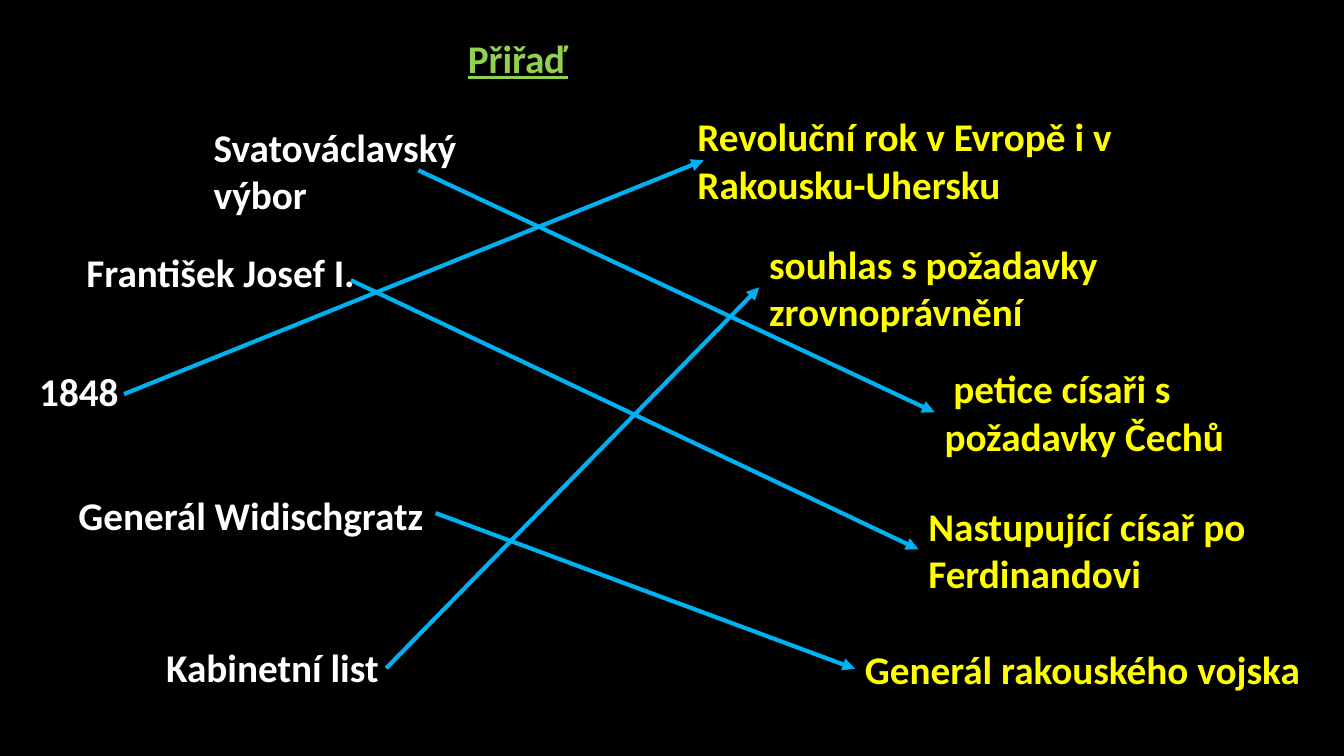
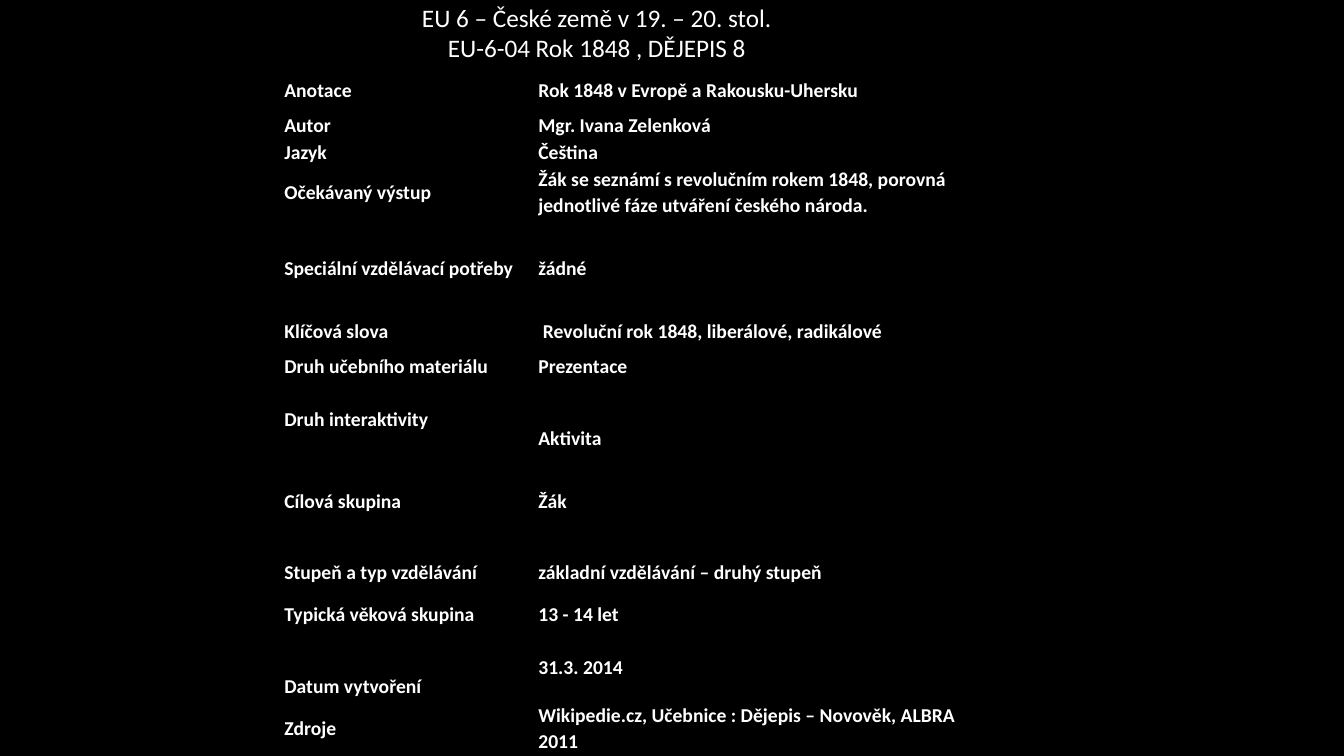
from dataclasses import dataclass

import pptx
import pptx.dml.color
import pptx.enum.shapes
import pptx.enum.text
import pptx.oxml
import pptx.oxml.ns
import pptx.util

Pt = pptx.util.Pt
Anchor = pptx.enum.text.MSO_ANCHOR
Align = pptx.enum.text.PP_ALIGN

# Shared look
FONT = "Calibri"
BLACK, WHITE, YELLOW, GREEN, BLUE = "000000", "FFFFFF", "FFFF00", "92D050", "00B0F0"
WIDTH, HEIGHT = pptx.util.Inches(13.33), pptx.util.Inches(7.5)
ONE_LINE, TWO_LINES = 7.6, 13.87


@dataclass
class Box:
    """A place on the slide, in percent of its width and height."""
    x: float
    y: float
    w: float
    h: float = ONE_LINE


@dataclass
class Pair:
    term: str
    term_box: Box
    answer: str
    answer_box: Box
    start: tuple[float, float]
    inset: float = 0


@dataclass
class Row:
    label: str
    value: str
    h: float
    label_anchor: Anchor = Anchor.MIDDLE
    value_anchor: Anchor = Anchor.MIDDLE


PAIRS = [
    Pair("Svatováclavský výbor", Box(15.15, 15.6, 24.23, TWO_LINES),
         " petice císaři s požadavky Čechů", Box(69.54, 47.6, 27.76, TWO_LINES), (31.13, 22.53)),
    Pair("František Josef I.", Box(5.7, 32.13, 27.16),
         "Nastupující císař po Ferdinandovi", Box(68.34, 65.73, 27.76, TWO_LINES), (26.11, 37.07)),
    Pair("1848", Box(2.18, 47.87, 23.63),
         "Revoluční rok v Evropě i v Rakousku-Uhersku", Box(51.16, 14.27, 32.86, TWO_LINES),
         (9.23, 52.13), inset=1.2),
    Pair("Generál Widischgratz", Box(5.1, 64.4, 30.46),
         "Generál rakouského vojska", Box(63.62, 84.67, 34.88), (32.41, 67.87)),
    Pair("Kabinetní list", Box(11.63, 84.4, 25.96),
         "souhlas s požadavky zrovnoprávnění", Box(56.49, 31.07, 32.48, TWO_LINES), (28.73, 88.4)),
]

# Row heights, in percent of the slide's height
TIGHT, NORMAL, DOUBLE, TALL, HIGH = 3.6, 5.6, 7.07, 8.53, 13.07
ROWS = [
    Row("Anotace", "Rok 1848 v Evropě a Rakousku-Uhersku", NORMAL),
    Row("Autor", "Mgr. Ivana Zelenková", TIGHT),
    Row("Jazyk", "Čeština", TIGHT),
    Row("Očekávaný výstup", "Žák se seznámí s revolučním rokem 1848, porovná "
        "jednotlivé fáze utváření českého národa.", DOUBLE),
    Row("Speciální vzdělávací potřeby", "žádné", HIGH),
    Row("Klíčová slova", " Revoluční rok 1848, liberálové, radikálové", TIGHT),
    Row("Druh učebního materiálu", "Prezentace", NORMAL),
    Row("Druh interaktivity", "Aktivita", TALL, value_anchor=Anchor.BOTTOM),
    Row("Cílová skupina", "Žák", HIGH),
    Row("Stupeň a typ vzdělávání", "základní vzdělávání – druhý stupeň", NORMAL),
    Row("Typická věková skupina", "13 - 14 let", NORMAL),
    Row("Datum vytvoření", "31.3. 2014", TALL, label_anchor=Anchor.BOTTOM),
    Row("Zdroje", "Wikipedie.cz, Učebnice : Dějepis – Novověk, ALBRA 2011", 7.47),
]
COLUMNS = [18.9, 32.48]


def color(value: str) -> pptx.dml.color.RGBColor:
    return pptx.dml.color.RGBColor.from_string(value)


def px(share: float) -> int:
    return round(WIDTH * share / 100)


def py(share: float) -> int:
    return round(HEIGHT * share / 100)


def place(box: Box) -> tuple[int, int, int, int]:
    return px(box.x), py(box.y), px(box.w), py(box.h)


def add_run(p, text: str, size: float, ink: str, bold: bool = False, underline: bool = False) -> None:
    r = p.add_run()
    r.text = text
    r.font.name, r.font.size = FONT, Pt(size)
    r.font.bold, r.font.underline = bold, underline
    r.font.color.rgb = color(ink)


def add_title(s, box: Box, lines: list[str], size: float, ink: str, align: Align,
              anchor: Anchor, bold: bool = False, underline: bool = False) -> None:
    sp = s.shapes.title
    sp.left, sp.top, sp.width, sp.height = place(box)
    tf = sp.text_frame
    tf.word_wrap, tf.vertical_anchor = True, anchor
    tf.auto_size = pptx.enum.text.MSO_AUTO_SIZE.SHAPE_TO_FIT_TEXT
    for i, line in enumerate(lines):
        p = tf.add_paragraph() if i else tf.paragraphs[0]
        p.alignment = align
        add_run(p, line, size, ink, bold, underline)


def add_label(s, box: Box, text: str, ink: str) -> None:
    tf = s.shapes.add_textbox(*place(box)).text_frame
    tf.word_wrap = True
    add_run(tf.paragraphs[0], text, 28, ink, bold=True)


def add_arrow(s, pair: Pair) -> None:
    """Point from the term to the middle of the answer's left edge."""
    end = pair.answer_box
    line = s.shapes.add_connector(
        pptx.enum.shapes.MSO_CONNECTOR.STRAIGHT, px(pair.start[0]), py(pair.start[1]),
        px(end.x + pair.inset), py(end.y + end.h / 2))
    line.line.color.rgb = color(BLUE)
    line.line.width = Pt(3)
    ln = line.line._get_or_add_ln()
    ln.append(pptx.oxml.parse_xml(f'<a:tailEnd {pptx.oxml.ns.nsdecls("a")} type="triangle"/>'))
    ln.addnext(pptx.oxml.parse_xml(f'<a:effectLst {pptx.oxml.ns.nsdecls("a")}/>'))


def fill_cell(cell, text: str, anchor: Anchor) -> None:
    cell.margin_left = cell.margin_right = cell.margin_top = cell.margin_bottom = Pt(0.75)
    cell.vertical_anchor = anchor
    p = cell.text_frame.paragraphs[0]
    p.line_spacing, p.space_after = 1.07, Pt(8)
    add_run(p, text, 14, WHITE, bold=True)
    # Borders come before the fill in the cell's properties
    tc_pr = cell._tc.get_or_add_tcPr()
    for side in ("lnL", "lnR", "lnT", "lnB"):
        tc_pr.append(pptx.oxml.parse_xml(
            f'<a:{side} {pptx.oxml.ns.nsdecls("a")} w="12700"><a:solidFill>'
            f'<a:srgbClr val="{BLACK}"/></a:solidFill></a:{side}>'))
    cell.fill.background()


def add_facts(s, x: float, y: float, rows: list[Row]) -> None:
    box = Box(x, y, sum(COLUMNS), sum(row.h for row in rows))
    table = s.shapes.add_table(len(rows), len(COLUMNS), *place(box)).table
    table.first_row = table.horz_banding = False
    for column, share in zip(table.columns, COLUMNS):
        column.width = px(share)
    for i, row in enumerate(rows):
        table.rows[i].height = py(row.h)
        fill_cell(table.cell(i, 0), row.label, row.label_anchor)
        fill_cell(table.cell(i, 1), row.value, row.value_anchor)


def build_matching(s) -> None:
    add_title(s, Box(34.06, 3.87, 14.78), ["Přiřaď"], 28, GREEN,
              Align.LEFT, Anchor.TOP, bold=True, underline=True)
    for pair in PAIRS:
        add_label(s, pair.term_box, pair.term, WHITE)
        add_label(s, pair.answer_box, pair.answer, YELLOW)
    for pair in PAIRS:
        add_arrow(s, pair)


def build_facts(s) -> None:
    add_facts(s, 21.08, 9.07, ROWS)
    add_title(s, Box(26.41, -0.4, 36, 9.47),
              ["EU 6 – České země v 19. – 20. stol.", "EU-6-04 Rok 1848 , DĚJEPIS 8"],
              18, WHITE, Align.CENTER, Anchor.MIDDLE)


def main() -> None:
    prs = pptx.Presentation()
    prs.slide_width, prs.slide_height = WIDTH, HEIGHT
    background = prs.slide_master.background.fill
    background.solid()
    background.fore_color.rgb = color(BLACK)
    title_only = prs.slide_layouts[5]
    for build in (build_matching, build_facts):
        build(prs.slides.add_slide(title_only))
    prs.save("out.pptx")


if __name__ == "__main__":
    main()
